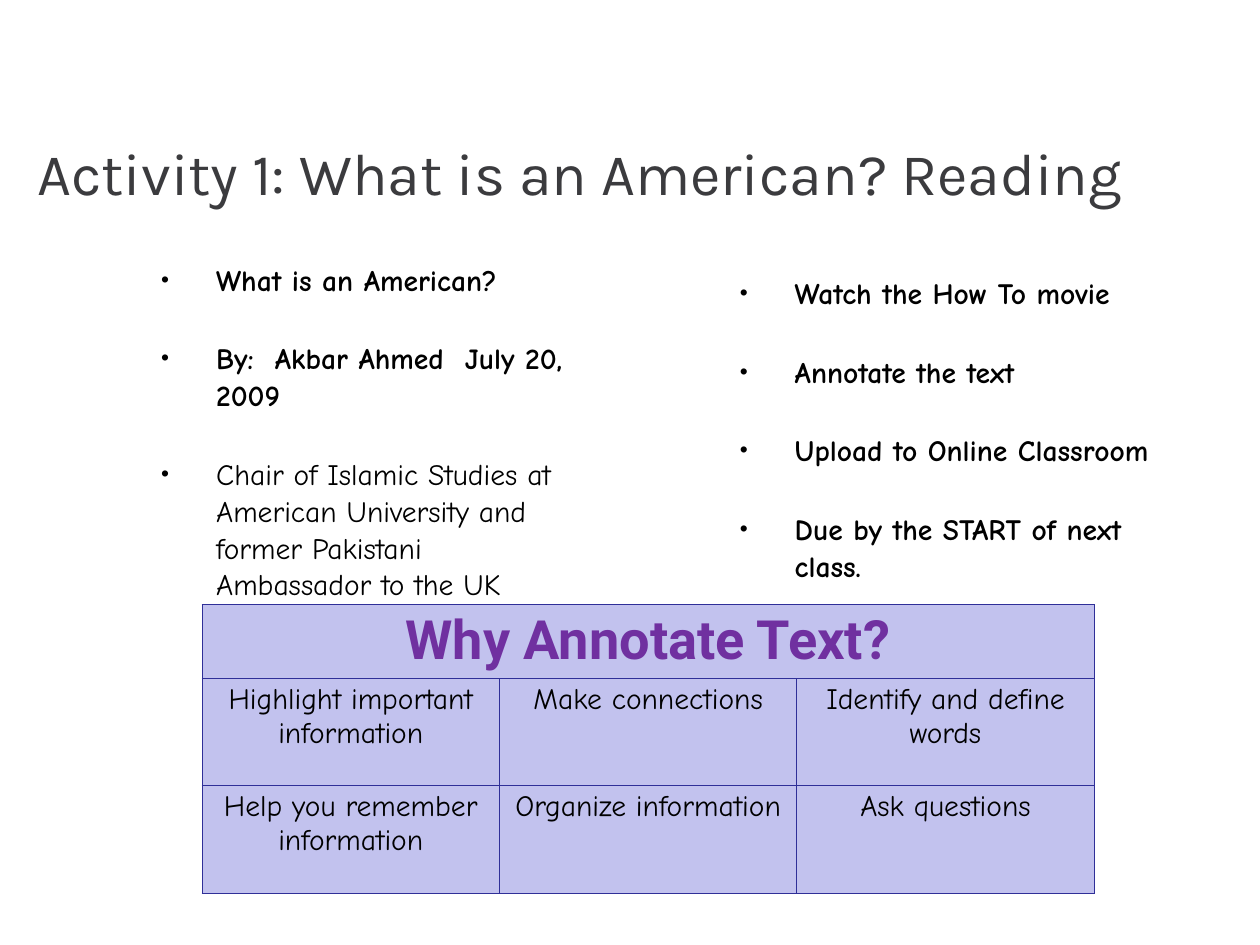
from lxml.etree import SubElement
from pptx import Presentation
from pptx.dml.color import RGBColor
from pptx.enum.text import MSO_ANCHOR, PP_ALIGN
from pptx.oxml.ns import qn
from pptx.util import Inches, Pt

TITLE = "Activity 1: What is an American? Reading"
ARTICLE = [
    ("What is an American?", True),
    ("By:  Akbar Ahmed  July 20, 2009", True),
    ("Chair of Islamic Studies at American University and former "
     "Pakistani Ambassador to the UK", False),
]
TASKS = [
    ("Watch the How To movie", True),
    ("Annotate the text", True),
    ("Upload to Online Classroom", True),
    ("Due by the START of next class.", True),
]
REASONS_HEADING = "Why Annotate Text?"
REASONS = [
    ["Highlight important information", "Make connections", "Identify and define words"],
    ["Help you remember information", "Organize information", "Ask questions"],
]


def rgb(code):
    return RGBColor.from_string(code)


def write(paragraph, text, font="Comic Neue", size=24, color="000000", bold=False, align=None):
    run = paragraph.add_run()
    run.text = text
    run.font.name = font
    run.font.size = Pt(size)
    run.font.bold = bold
    run.font.color.rgb = rgb(color)
    if align is not None:
        paragraph.alignment = align


def add_bullet(paragraph):
    """Give the paragraph a small hanging bullet."""
    properties = paragraph._p.get_or_add_pPr()
    properties.set("marL", str(Inches(0.8)))
    properties.set("indent", str(Inches(-0.62)))
    SubElement(properties, qn("a:buSzPct"), val="77000")
    SubElement(properties, qn("a:buFont"), typeface="Arial")
    SubElement(properties, qn("a:buChar"), char="•")


class ReadingSlide:
    cell_fill = "C2C2EE"
    border = "2F2F98"
    text_inset = Inches(0.06)
    cell_inset = Inches(0.05)

    def __init__(self, presentation):
        self.slide = presentation.slides.add_slide(presentation.slide_layouts[6])

    def frame(self, left, top, width, height):
        """Add a wrapping text box and return its text frame."""
        box = self.slide.shapes.add_textbox(
            Inches(left), Inches(top), Inches(width), Inches(height))
        frame = box.text_frame
        frame.word_wrap = True
        frame.margin_left = frame.margin_right = self.text_inset
        frame.margin_top = frame.margin_bottom = self.text_inset
        return frame

    def title(self, text):
        frame = self.frame(0.36, 1, 13.58, 1.88)
        frame.vertical_anchor = MSO_ANCHOR.MIDDLE
        write(frame.paragraphs[0], text, font="Karla", size=48, color="3B3B3E")

    def bullets(self, left, top, items):
        frame = self.frame(left, top, 5.07, 6.19)
        for index, (text, bold) in enumerate(items):
            paragraph = frame.add_paragraph() if index else frame.paragraphs[0]
            add_bullet(paragraph)
            paragraph.line_spacing = 1.04
            if index:
                paragraph.space_before = Pt(34)
            write(paragraph, text, bold=bold)

    def style_cell(self, cell):
        cell.margin_left = cell.margin_right = self.cell_inset
        cell.margin_top = cell.margin_bottom = self.cell_inset
        properties = cell._tc.get_or_add_tcPr()
        for side in ("a:lnL", "a:lnR", "a:lnT", "a:lnB"):
            line = SubElement(properties, qn(side), w=str(Pt(0.75)))
            solid = SubElement(line, qn("a:solidFill"))
            SubElement(solid, qn("a:srgbClr"), val=self.border)
        cell.fill.solid()
        cell.fill.fore_color.rgb = rgb(self.cell_fill)

    def table(self, heading, rows):
        columns = len(rows[0])
        heights = [0.82] + [1.21] * len(rows)
        table = self.slide.shapes.add_table(
            len(heights), columns, Inches(2.28), Inches(6.83),
            Inches(10.07), Inches(sum(heights))).table
        for row, height in zip(table.rows, heights):
            row.height = Inches(height)
        for cell in table.iter_cells():
            self.style_cell(cell)
        table.cell(0, 0).merge(table.cell(0, columns - 1))
        write(table.cell(0, 0).text_frame.paragraphs[0], heading, font="Roboto",
              size=44, color="7030A0", bold=True, align=PP_ALIGN.CENTER)
        for row_index, reasons in enumerate(rows, start=1):
            for column, reason in enumerate(reasons):
                write(table.cell(row_index, column).text_frame.paragraphs[0],
                      reason, align=PP_ALIGN.CENTER)


def main():
    presentation = Presentation()
    presentation.slide_width = Inches(14.22)
    presentation.slide_height = Inches(10.67)
    reading = ReadingSlide(presentation)
    reading.title(TITLE)
    reading.bullets(1.58, 2.88, ARTICLE)
    reading.bullets(8.11, 3.03, TASKS)
    reading.table(REASONS_HEADING, REASONS)
    presentation.save("out.pptx")


if __name__ == "__main__":
    main()
